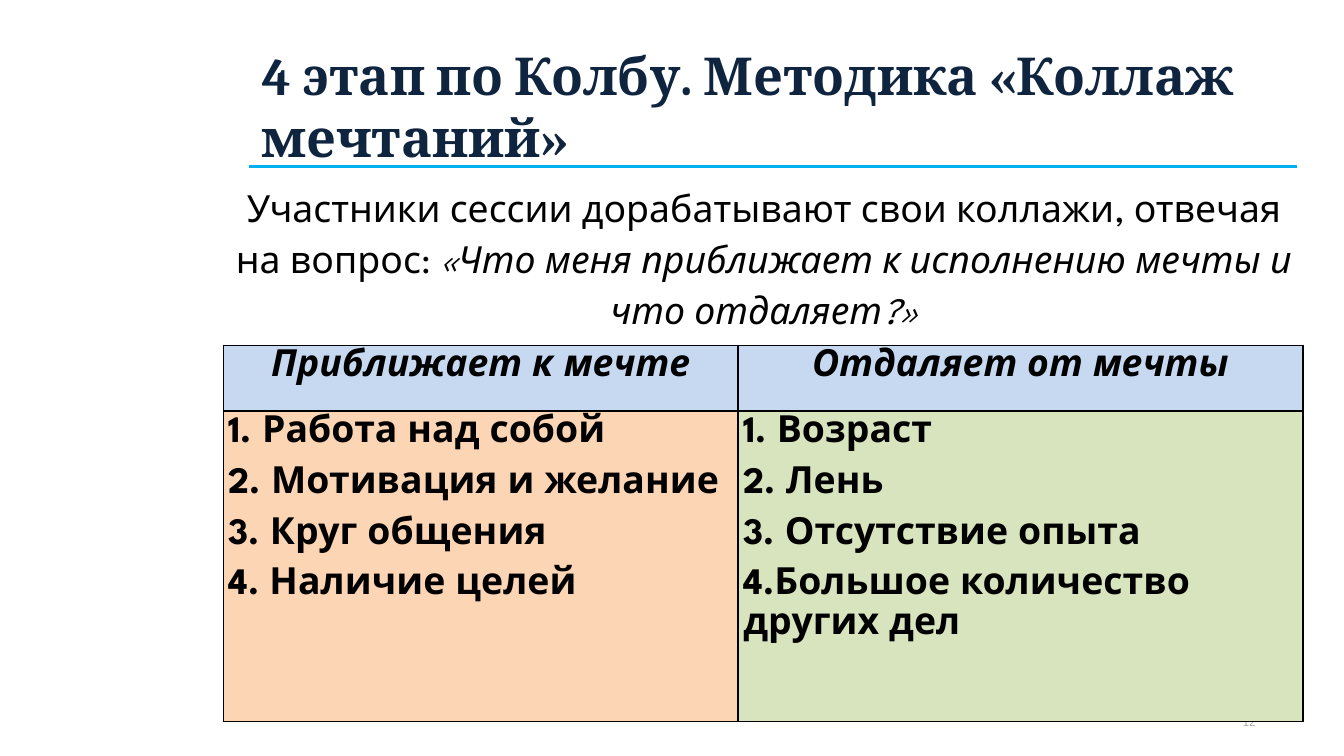
from dataclasses import dataclass

from lxml.etree import SubElement
from pptx import Presentation
from pptx.dml.color import RGBColor
from pptx.enum.shapes import MSO_CONNECTOR
from pptx.enum.text import MSO_ANCHOR, PP_ALIGN
from pptx.oxml.ns import qn
from pptx.util import Cm, Pt


@dataclass(frozen=True)
class Theme:
    head_font: str = "Cambria"
    body_font: str = "League Spartan"
    page_font: str = "Arial"
    head_size: float = 28
    body_size: float = 20
    page_size: float = 6
    navy: str = "0F243E"
    black: str = "000000"
    gray: str = "A6A6A6"
    rule: str = "00B0F0"
    blue: str = "C6D9F1"
    peach: str = "FCD5B5"
    green: str = "D7E4BD"


THEME = Theme()
LEFT, WIDTH, RULE_Y = 4.7, 19.81, 3.15


def color(code):
    return RGBColor.from_string(code)


def style(run, font, size, tint, bold=False, italic=False):
    run.font.name = font
    run.font.size = Pt(size)
    run.font.color.rgb = color(tint)
    run.font.bold = bold
    run.font.italic = italic


def body_style(run, bold=False, italic=False):
    style(run, THEME.body_font, THEME.body_size, THEME.black, bold, italic)


def space(para, lines):
    para.line_spacing = lines
    para.space_after = Pt(6)


def add_box(slide, left, top, width, height, align, anchor=MSO_ANCHOR.MIDDLE):
    """Add an empty wrapping text box and return its text frame."""
    box = slide.shapes.add_textbox(Cm(left), Cm(top), Cm(width), Cm(height))
    frame = box.text_frame
    frame.word_wrap = True
    frame.vertical_anchor = anchor
    frame.paragraphs[0].alignment = align
    return frame


def add_rule(slide):
    y = Cm(RULE_Y)
    line = slide.shapes.add_connector(
        MSO_CONNECTOR.STRAIGHT, Cm(LEFT), y, Cm(LEFT + WIDTH), y)
    line.line.color.rgb = color(THEME.rule)
    line.line.width = Pt(1.5)
    SubElement(line._element.spPr, qn("a:effectLst"))


def add_title(slide, text):
    frame = add_box(slide, LEFT, 0.84, WIDTH, 2.31, PP_ALIGN.CENTER)
    frame.text = text
    style(frame.paragraphs[0].runs[0], THEME.head_font, THEME.head_size,
          THEME.navy, bold=True)


def add_page(slide, text):
    frame = add_box(slide, 23.24, 13.34, 1.19, 0.61, PP_ALIGN.RIGHT)
    frame.text = text
    style(frame.paragraphs[0].runs[0], THEME.page_font, THEME.page_size,
          THEME.gray)


def add_intro(slide, plain, quote):
    frame = add_box(slide, 3.91, 3.25, 21.06, 3.1, PP_ALIGN.CENTER,
                    MSO_ANCHOR.TOP)
    para = frame.paragraphs[0]
    space(para, 1.14)
    for text, italic in ((plain, False), (quote, True)):
        run = para.add_run()
        run.text = text
        body_style(run, italic=italic)


def add_edges(cell):
    """Draw a thin black border on all four sides, ahead of the fill."""
    props = cell._tc.get_or_add_tcPr()
    for spot, side in enumerate(("lnL", "lnR", "lnT", "lnB")):
        edge = SubElement(props, qn(f"a:{side}"), w=str(Pt(1)))
        fill = SubElement(edge, qn("a:solidFill"))
        SubElement(fill, qn("a:srgbClr"), val=THEME.black)
        props.insert(spot, edge)


def fill_cell(cell, lines, tint, head):
    cell.margin_left = cell.margin_right = Cm(0.1)
    cell.margin_top = cell.margin_bottom = 0
    cell.fill.solid()
    cell.fill.fore_color.rgb = color(tint)
    add_edges(cell)
    cell.text_frame.text = "\n".join(lines)
    for para in cell.text_frame.paragraphs:
        para.alignment = PP_ALIGN.CENTER if head else PP_ALIGN.LEFT
        space(para, 1.15)
        body_style(para.runs[0], bold=True, italic=head)


def add_grid(slide, columns):
    """Add a table from (width, heading, items, tint) columns."""
    heights = (1.24, 5.87)
    total = sum(column[0] for column in columns)
    frame = slide.shapes.add_table(
        len(heights), len(columns), Cm(4.22), Cm(6.53),
        Cm(total), Cm(sum(heights)))
    table = frame.table
    for row, height in zip(table.rows, heights):
        row.height = Cm(height)
    for col, (width, heading, items, tint) in enumerate(columns):
        table.columns[col].width = Cm(width)
        fill_cell(table.cell(0, col), [heading], THEME.blue, True)
        fill_cell(table.cell(1, col), items, tint, False)


def main():
    deck = Presentation()
    deck.slide_width, deck.slide_height = Cm(25.4), Cm(14.29)
    slide = deck.slides.add_slide(deck.slide_layouts[6])
    add_rule(slide)
    add_title(slide, "4 этап по Колбу. Методика «Коллаж мечтаний»")
    add_page(slide, "12")
    add_grid(slide, [
        (9.73, "Приближает к мечте",
         ["1. Работа над собой", "2. Мотивация и желание",
          "3. Круг общения", "4. Наличие целей"], THEME.peach),
        (10.67, "Отдаляет от мечты",
         ["1. Возраст", "2. Лень", "3. Отсутствие опыта",
          "4.Большое количество других дел"], THEME.green),
    ])
    add_intro(slide,
              "Участники сессии дорабатывают свои коллажи, отвечая на вопрос: ",
              "«Что меня приближает к исполнению мечты и что отдаляет?»")
    deck.save("out.pptx")


if __name__ == "__main__":
    main()
